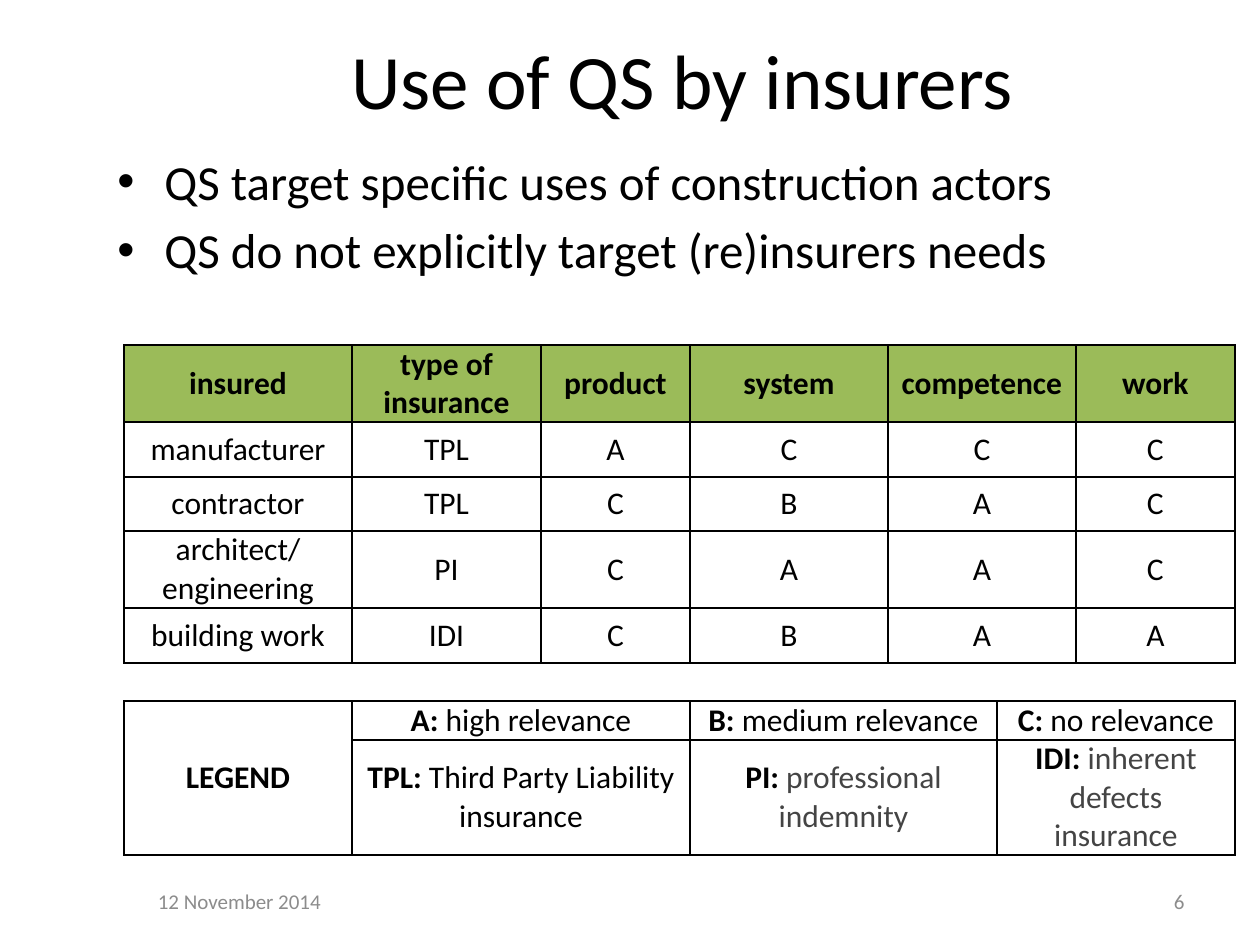
from lxml import etree
from pptx import Presentation
from pptx.dml.color import RGBColor
from pptx.enum.text import MSO_ANCHOR, PP_ALIGN
from pptx.oxml.ns import qn
from pptx.util import Emu, Pt

CENTER, LEFT, RIGHT = PP_ALIGN.CENTER, PP_ALIGN.LEFT, PP_ALIGN.RIGHT
TOP, MIDDLE = MSO_ANCHOR.TOP, MSO_ANCHOR.MIDDLE
SCALE = 914400 / 126
BLACK, GRAY, DARK, GREEN = "000000", "8C8C8C", "444444", "9BBB59"
TITLE_ONLY = 5

COLUMNS = [228, 189, 149, 198, 109, 79, 159]
ROWS = [77, 55, 54, 77, 55, 38, 39, 115]
HEADER = ["insured", "type of insurance", "product", "system", "competence", "work"]
RELEVANCE = [
    ["manufacturer", "TPL", "A", "C", "C", "C"],
    ["contractor", "TPL", "C", "B", "A", "C"],
    ["architect/\nengineering", "PI", "C", "A", "A", "C"],
    ["building work", "IDI", "C", "B", "A", "A"],
]
LEGEND = [
    [("A:", " high relevance", BLACK), ("B:", " medium relevance", BLACK),
     ("C:", " no relevance", BLACK)],
    [("TPL:", " Third Party Liability insurance", BLACK),
     ("PI:", " professional indemnity", DARK),
     ("IDI: ", "inherent defects insurance", DARK)],
]
DATA_STARTS = [0, 1, 2, 3, 4, 6]
LEGEND_STARTS = [1, 3, 5]
GAP_ROW, LEGEND_ROW = 5, 6


def px(length):
    return Emu(round(length * SCALE))


def color(value):
    return RGBColor.from_string(value)


class SlideBuilder:
    """Holds the text style and the current slide, and adds elements to it."""

    font = "Calibri"

    def __init__(self, slide):
        self.slide = slide

    def span(self, para, text, size, fill=BLACK, bold=False):
        span = para.add_run()
        span.text = text
        span.font.name = self.font
        span.font.size = Pt(size)
        span.font.bold = bold
        span.font.color.rgb = color(fill)

    def title(self, text, left, top, width, height):
        box = self.slide.shapes.title
        box.left, box.top, box.width, box.height = map(px, (left, top, width, height))
        box.text_frame.vertical_anchor = MIDDLE
        para = box.text_frame.paragraphs[0]
        para.alignment = CENTER
        self.span(para, text, 44)

    def text_box(self, left, top, width, height, anchor):
        frame = self.slide.shapes.add_textbox(*map(px, (left, top, width, height))).text_frame
        frame.word_wrap = True
        frame.vertical_anchor = anchor
        return frame

    def label(self, text, left, top, width, height, alignment):
        para = self.text_box(left, top, width, height, MIDDLE).paragraphs[0]
        para.alignment = alignment
        self.span(para, text, 12, GRAY)

    def bullets(self, lines, left, top, width, height):
        frame = self.text_box(left, top, width, height, TOP)
        for index, line in enumerate(lines):
            para = frame.add_paragraph() if index else frame.paragraphs[0]
            para.alignment = LEFT
            if index:
                para.space_before = Pt(5.6)
            properties = para._p.get_or_add_pPr()
            properties.set("marL", str(px(47)))
            properties.set("indent", str(-px(47)))
            etree.SubElement(properties, qn("a:buFont"), typeface="Arial")
            etree.SubElement(properties, qn("a:buChar"), char="•")
            self.span(para, line, 28)

    def table(self, left, top, columns, rows):
        frame = self.slide.shapes.add_table(
            len(rows), len(columns), *map(px, (left, top, sum(columns), sum(rows))))
        table = frame.table
        table.first_row = table.horz_banding = False
        for column, width in zip(table.columns, columns):
            column.width = px(width)
        for row, height in zip(table.rows, rows):
            row.height = px(height)
        return table

    def cell_style(self, cell, fill=None, sides="LRTB"):
        cell.margin_left = cell.margin_right = px(9)
        cell.margin_top = cell.margin_bottom = 0
        cell.vertical_anchor = MIDDLE
        properties = cell._tc.get_or_add_tcPr()
        for side in "LRTB":
            line = etree.SubElement(properties, qn(f"a:ln{side}"), w=str(Pt(1)))
            if side in sides:
                solid = etree.SubElement(line, qn("a:solidFill"))
                etree.SubElement(solid, qn("a:srgbClr"), val=BLACK)
            else:
                etree.SubElement(line, qn("a:noFill"))
        if fill:
            cell.fill.solid()
            cell.fill.fore_color.rgb = color(fill)
        else:
            cell.fill.background()

    def cell_text(self, cell, *spans):
        para = cell.text_frame.paragraphs[0]
        para.alignment = CENTER
        for index, (text, fill, bold) in enumerate(spans):
            lines = text.split("\n")
            self.span(para, lines[0], 18, fill, bold)
            for line in lines[1:]:
                para = cell.text_frame.add_paragraph()
                para.alignment = CENTER
                self.span(para, line, 18, fill, bold)


def fill_relevance_table(builder, table):
    for row in range(len(ROWS)):
        for column in range(len(COLUMNS)):
            cell = table.cell(row, column)
            builder.cell_style(cell, GREEN if row == 0 else None,
                               "TB" if row == GAP_ROW else "LRTB")
            if row == GAP_ROW:
                para = cell.text_frame.paragraphs[0]
                etree.SubElement(para._p, qn("a:endParaRPr"), sz="1200")
    for row in range(LEGEND_ROW):
        table.cell(row, 4).merge(table.cell(row, 5))
    for row, texts in enumerate([HEADER] + RELEVANCE):
        for column, text in zip(DATA_STARTS, texts):
            builder.cell_text(table.cell(row, column), (text, BLACK, row == 0))
    table.cell(LEGEND_ROW, 0).merge(table.cell(LEGEND_ROW + 1, 0))
    builder.cell_text(table.cell(LEGEND_ROW, 0), ("LEGEND", BLACK, True))
    for row, entries in enumerate(LEGEND, LEGEND_ROW):
        for column, (key, meaning, fill) in zip(LEGEND_STARTS, entries):
            cell = table.cell(row, column)
            cell.merge(table.cell(row, column + 1))
            builder.cell_text(cell, (key, BLACK, True), (meaning, fill, False))


def main():
    deck = Presentation()
    deck.slide_width, deck.slide_height = px(1260), px(945)
    page = deck.slides.add_slide(deck.slide_layouts[TITLE_ONLY])
    builder = SlideBuilder(page)
    builder.title("Use of QS by insurers", 105, 0, 1155, 158)
    builder.bullets(["QS target specific uses of construction actors",
                     "QS do not explicitly target (re)insurers needs"], 105, 145, 1155, 745)
    builder.label("12 November 2014", 115, 876, 249, 50, CENTER)
    builder.label("6", 903, 876, 294, 50, RIGHT)
    fill_relevance_table(builder, builder.table(124, 345, COLUMNS, ROWS))
    deck.save("out.pptx")


if __name__ == "__main__":
    main()
